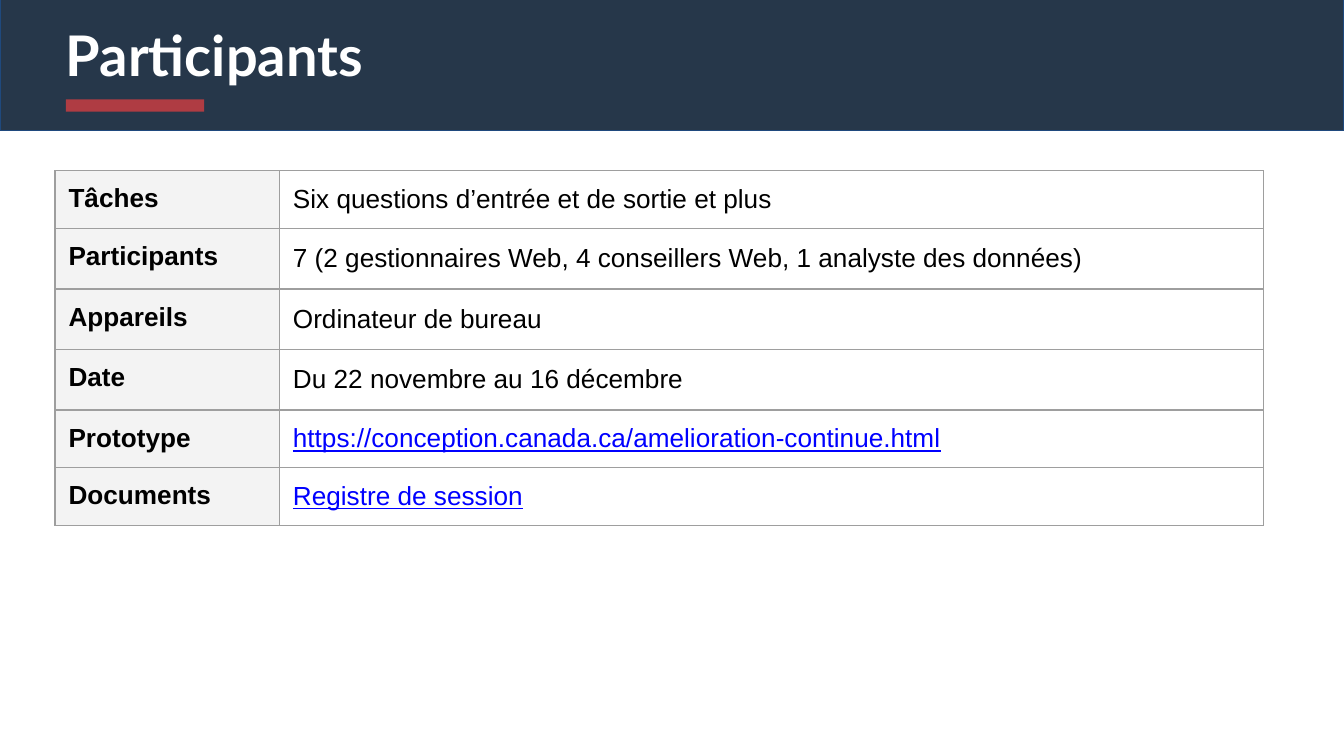
from pptx import Presentation
from pptx.dml.color import RGBColor
from pptx.enum.shapes import MSO_SHAPE
from pptx.enum.text import MSO_ANCHOR, PP_ALIGN
from pptx.oxml import parse_xml
from pptx.oxml.ns import nsdecls
from pptx.util import Inches, Pt

NAVY = RGBColor(0x26, 0x37, 0x4A)
EDGE_BLUE = RGBColor(0x1F, 0x49, 0x7D)
RED = RGBColor(0xAF, 0x3C, 0x43)
WHITE = RGBColor(0xFF, 0xFF, 0xFF)
BLACK = RGBColor(0, 0, 0)
LINK_BLUE = RGBColor(0, 0, 0xFF)
LABEL_GREY = RGBColor(0xF3, 0xF3, 0xF3)
BORDER_GREY = RGBColor(0x9E, 0x9E, 0x9E)

HEADING = "Participants"
DETAILS = [
    ("Tâches", "Six questions d’entrée et de sortie et plus", 0.43),
    ("Participants", "7 (2 gestionnaires Web, 4 conseillers Web, 1 analyste des données)", 0.45),
    ("Appareils", "Ordinateur de bureau", 0.45),
    ("Date", "Du 22 novembre au 16 décembre", 0.45),
    ("Prototype", "https://conception.canada.ca/amelioration-continue.html", 0.43),
    ("Documents", "Registre de session", 0.43),
]
LINKED = {"Prototype", "Documents"}
COLUMN_WIDTHS = (1.67, 7.32)

LABEL_FONT = {"name": "Arial", "size": Pt(14), "bold": True}
VALUE_FONT = {**LABEL_FONT, "bold": False}
LINK_FONT = {**VALUE_FONT, "underline": True}
HEADING_FONT = {"name": "Lato", "size": Pt(30), "bold": True}
MARGINS = {f"margin_{side}": Inches(0.1) for side in ("left", "top", "right", "bottom")}


def apply(target, values):
    for key, value in values.items():
        setattr(target, key, value)


def add_block(slide, color, *box):
    block = slide.shapes.add_shape(MSO_SHAPE.RECTANGLE, *map(Inches, box))
    block.shadow.inherit = False
    block.fill.solid()
    block.fill.fore_color.rgb = color
    block.line.fill.background()
    return block


def fill_cell(cell, text, font_values, color, background, anchor):
    cell.text = text
    apply(cell, {**MARGINS, "vertical_anchor": anchor})
    font = cell.text_frame.paragraphs[0].runs[0].font
    apply(font, font_values)
    font.color.rgb = color
    for position, edge in enumerate(("lnL", "lnR", "lnT", "lnB")):
        border = parse_xml(
            f'<a:{edge} {nsdecls("a")} w="{Pt(0.75)}"><a:solidFill>'
            f'<a:srgbClr val="{BORDER_GREY}"/></a:solidFill></a:{edge}>'
        )
        cell._tc.get_or_add_tcPr().insert(position, border)
    if background is None:
        cell.fill.background()
    else:
        cell.fill.solid()
        cell.fill.fore_color.rgb = background


def main():
    deck = Presentation()
    deck.slide_width = Inches(10)
    deck.slide_height = deck.slide_width * 9 // 16
    slide = deck.slides.add_slide(deck.slide_layouts[5])

    heading = slide.shapes.title
    apply(heading, {"left": Inches(0.39), "top": Inches(0.05),
                    "width": Inches(7.67), "height": Inches(1.05)})
    heading.text = HEADING
    apply(heading.text_frame, {**MARGINS, "vertical_anchor": MSO_ANCHOR.TOP})
    heading_line = heading.text_frame.paragraphs[0]
    heading_line.alignment = PP_ALIGN.LEFT
    apply(heading_line.runs[0].font, HEADING_FONT)
    heading_line.runs[0].font.color.rgb = WHITE

    banner = add_block(slide, NAVY, 0, -0.01, 10, 0.98)
    banner.line.color.rgb = EDGE_BLUE
    banner.line.width = Pt(0.75)
    heading._element.addprevious(banner._element)
    add_block(slide, RED, 0.49, 0.74, 1.03, 0.09)

    details = slide.shapes.add_table(
        len(DETAILS), len(COLUMN_WIDTHS), Inches(0.41), Inches(1.27),
        Inches(sum(COLUMN_WIDTHS)), Inches(sum(row[2] for row in DETAILS)),
    ).table
    apply(details, {"first_row": False, "horz_banding": False})
    for column, width in zip(details.columns, COLUMN_WIDTHS):
        column.width = Inches(width)
    for row, (label, value, height) in zip(details.rows, DETAILS):
        row.height = Inches(height)
        label_cell, value_cell = row.cells
        value_font, value_color = (LINK_FONT, LINK_BLUE) if label in LINKED else (VALUE_FONT, BLACK)
        fill_cell(label_cell, label, LABEL_FONT, BLACK, LABEL_GREY, MSO_ANCHOR.TOP)
        fill_cell(value_cell, value, value_font, value_color, None, MSO_ANCHOR.MIDDLE)

    deck.save("out.pptx")


if __name__ == "__main__":
    main()
